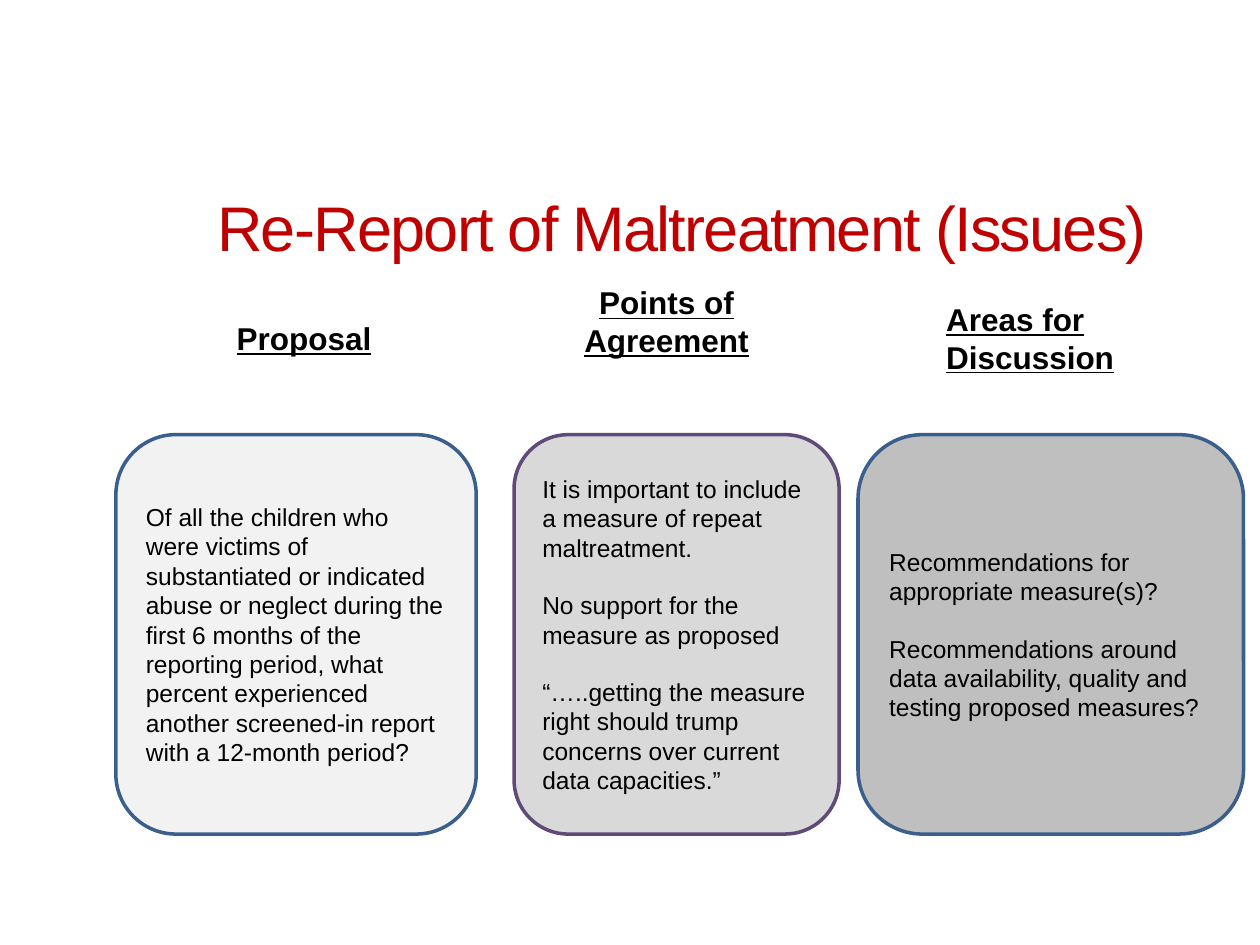
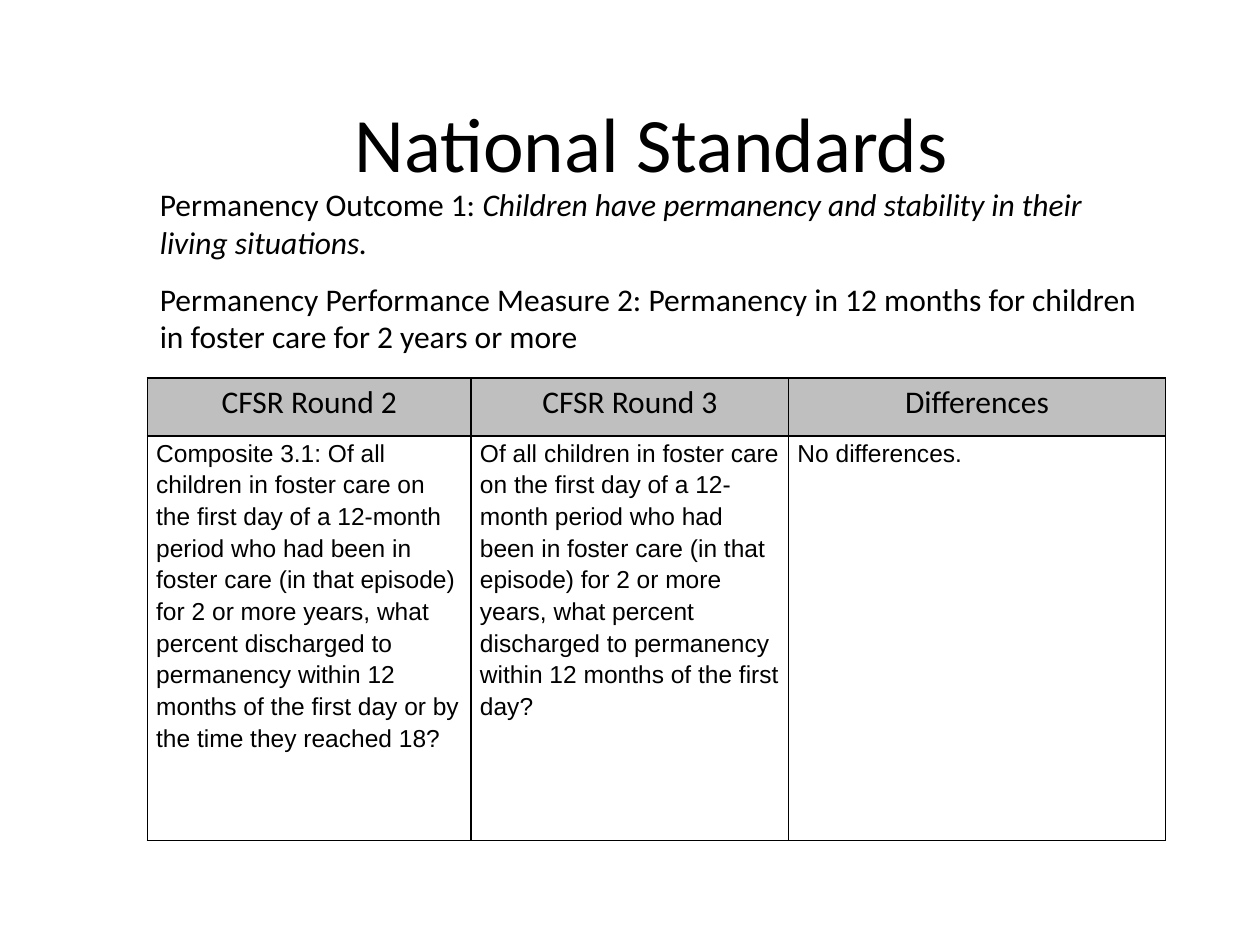
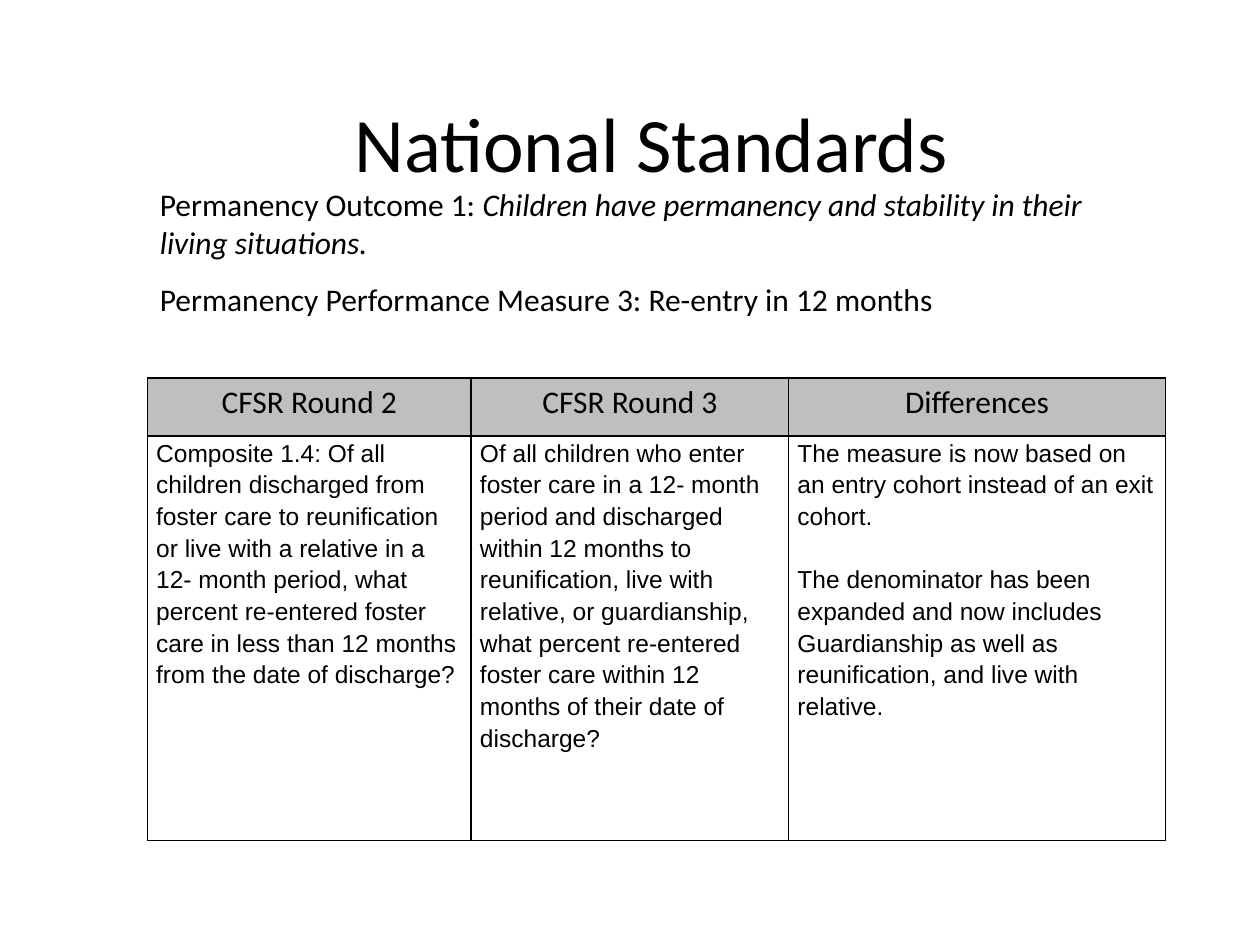
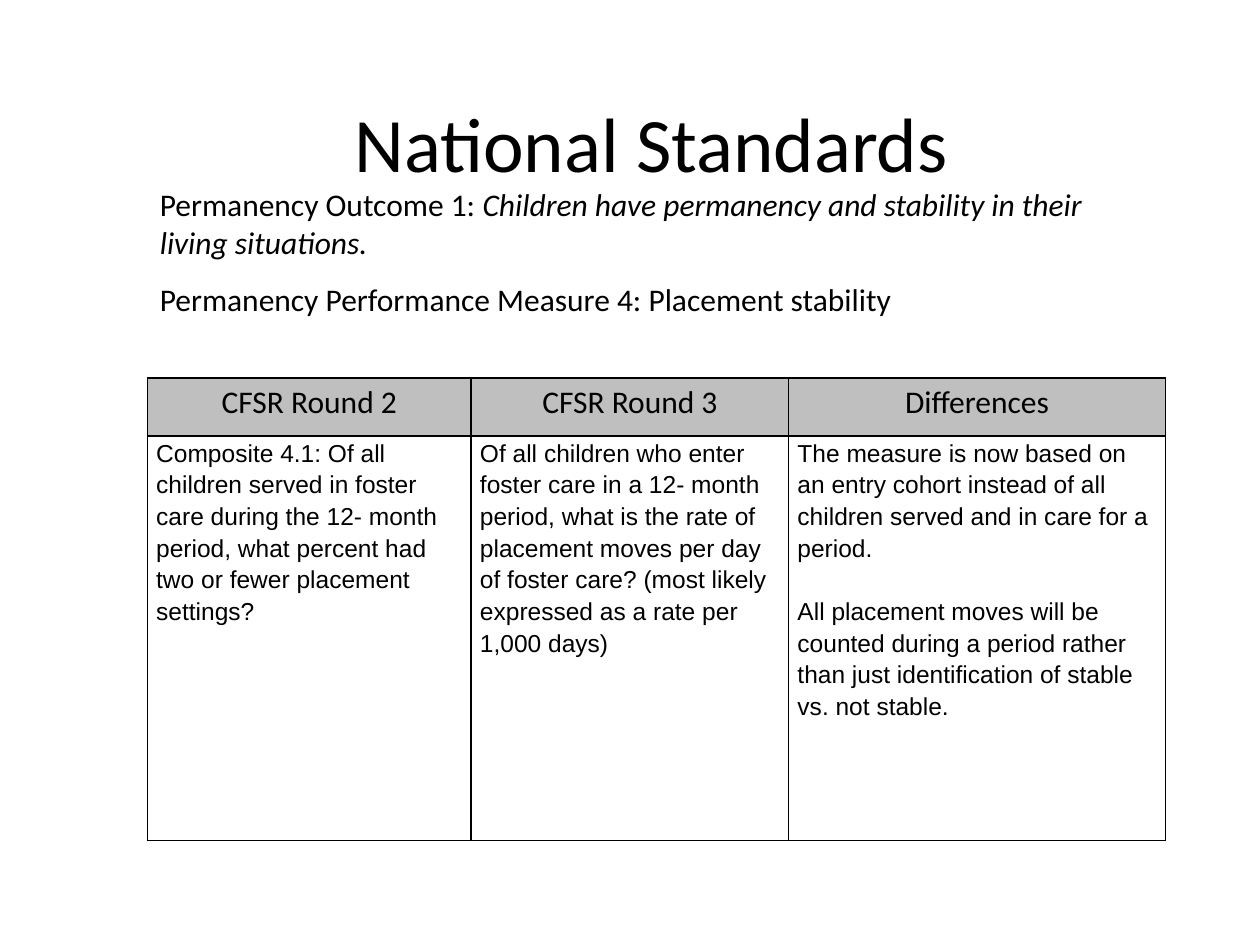
"""Build four slides on re-report of maltreatment and the national permanency standards."""
from lxml import etree
from pptx import Presentation
from pptx import util as u
from pptx.dml.color import RGBColor
from pptx.enum import shapes, text
from pptx.oxml import ns

PX = 9144
COLORS = {
    "title": "C00000", "text": "000000", "header": "BFBFBF",
    "proposal": "F2F2F2", "agreement": "D9D9D9", "discussion": "BFBFBF",
    "blue": "3A5F8C", "purple": "5F4A78",
}
LEFT, CENTER = text.PP_ALIGN.LEFT, text.PP_ALIGN.CENTER
MIDDLE = text.MSO_ANCHOR.MIDDLE
GROW = text.MSO_AUTO_SIZE.SHAPE_TO_FIT_TEXT


def write(frame, lines, size, font, align=LEFT, color="text", heading=False, spacing=None, gap=0):
    """Fill a frame with paragraphs; parts between asterisks are italic."""
    frame.word_wrap = True
    for index, line in enumerate(lines):
        paragraph = frame.add_paragraph() if index else frame.paragraphs[0]
        paragraph.alignment = align
        if spacing:
            paragraph.line_spacing = spacing
        if index and gap:
            paragraph.space_before = u.Pt(gap)
        for part_index, part in enumerate(line.split("*")):
            if not part:
                continue
            run = paragraph.add_run()
            run.text = part
            run.font.size = u.Pt(size)
            run.font.name = font
            run.font.color.rgb = RGBColor.from_string(COLORS[color])
            if heading:
                run.font.bold = run.font.underline = True
            if part_index % 2:
                run.font.italic = True


def add_text(slide, box, lines, size, font, **style):
    """Add a text box at a place given in px and return its frame."""
    frame = slide.shapes.add_textbox(*[n * PX for n in box]).text_frame
    write(frame, lines, size, font, **style)
    return frame


prs = Presentation()
prs.slide_width, prs.slide_height = 1000 * PX, 750 * PX
blank = prs.slide_layouts[6]

issues = prs.slides.add_slide(blank)
issues_title = add_text(issues, (125, 117, 833, 125), ["Re-Report of Maltreatment (Issues)"],
                        36, "Arial", align=CENTER, color="title")
issues_title.vertical_anchor = MIDDLE
issues_title.paragraphs[0].runs[0]._r.get_or_add_rPr().set("spc", "-100")

headings = [
    ("Proposal", (178, 248, 127, 39), LEFT, False),
    ("Points of Agreement", (408, 220, 242, 68), CENTER, True),
    ("Areas for Discussion", (741, 233, 175, 68), LEFT, True),
]
for heading, place, align, wraps in headings:
    heading_frame = add_text(issues, place, [heading], 18, "Arial", align=align, heading=True)
    heading_frame.word_wrap = wraps
    heading_frame.auto_size = GROW

panels = [
    (92, 286, "proposal", "blue", [
        "Of all the children who were victims of substantiated or indicated abuse or neglect "
        "during the first 6 months of the reporting period, what percent experienced another "
        "screened-in report with a 12-month period?"]),
    (408, 258, "agreement", "purple", [
        "It is important to include a measure of repeat maltreatment.",
        "No support for the measure as proposed",
        "“…..getting the measure right should trump concerns over current data capacities.”"]),
    (681, 306, "discussion", "blue", [
        "Recommendations for appropriate measure(s)?",
        "Recommendations around data availability, quality and testing proposed measures?"]),
]
for left, width, fill, outline, points in panels:
    panel = issues.shapes.add_shape(shapes.MSO_SHAPE.ROUNDED_RECTANGLE,
                                    left * PX, 345 * PX, width * PX, 317 * PX)
    panel.shadow.inherit = False
    panel.fill.solid()
    panel.fill.fore_color.rgb = RGBColor.from_string(COLORS[fill])
    panel.line.color.rgb = RGBColor.from_string(COLORS[outline])
    panel.line.width = u.Pt(2)
    panel.text_frame.vertical_anchor = MIDDLE
    write(panel.text_frame, points, 14, "Arial", gap=16)

columns = [("CFSR Round 2", 257), ("CFSR Round 3", 252), ("Differences", 299)]
measures = [
    ("2: Permanency in 12 months for children in foster care for 2 years or more", 71, [
        ["Composite 3.1: Of all children in foster care on the first day of a 12-month period "
         "who had been in foster care (in that episode) for 2 or more years, what percent "
         "discharged to permanency within 12 months of the first day or by the time they "
         "reached 18?"],
        ["Of all children in foster care on the first day of a 12-month period who had been in "
         "foster care (in that episode) for 2 or more years, what percent discharged to "
         "permanency within 12 months of the first day?"],
        ["No differences."]]),
    ("3: Re-entry in 12 months", 40, [
        ["Composite 1.4: Of all children discharged from foster care to reunification or live "
         "with a relative in a 12- month period, what percent re-entered foster care in less "
         "than 12 months from the date of discharge?"],
        ["Of all children who enter foster care in a 12- month period and discharged within 12 "
         "months to reunification, live with relative, or guardianship, what percent re-entered "
         "foster care within 12 months of their date of discharge?"],
        ["The measure is now based on an entry cohort instead of an exit cohort.",
         "The denominator has been expanded and now includes Guardianship as well as "
         "reunification, and live with relative."]]),
    ("4: Placement stability", 40, [
        ["Composite 4.1: Of all children served in foster care during the 12- month period, "
         "what percent had two or fewer placement settings?"],
        ["Of all children who enter foster care in a 12- month period, what is the rate of "
         "placement moves per day of foster care? (most likely expressed as a rate per 1,000 "
         "days)"],
        ["The measure is now based on an entry cohort instead of all children served and in "
         "care for a period.",
         "All placement moves will be counted during a period rather than just identification "
         "of stable vs. not stable."]]),
]
for measure, measure_height, comparison in measures:
    standards = prs.slides.add_slide(blank)
    standards_title = add_text(standards, (67, 50, 900, 125), ["National Standards"],
                               44, "Calibri", align=CENTER)
    standards_title.vertical_anchor = MIDDLE

    rounds = standards.shapes.add_table(2, 3, 117 * PX, 300 * PX, 808 * PX, 367 * PX).table
    rounds.first_row = rounds.horz_banding = False
    rounds.rows[0].height, rounds.rows[1].height = 46 * PX, 321 * PX
    for index, (header, width) in enumerate(columns):
        rounds.columns[index].width = width * PX
        for row in range(2):
            cell = rounds.cell(row, index)
            cell.margin_left = cell.margin_right = 7 * PX
            cell.margin_top = cell.margin_bottom = 0
            properties = cell._tc.get_or_add_tcPr()
            for side in ("lnL", "lnR", "lnT", "lnB"):
                border = etree.SubElement(properties, ns.qn("a:" + side), w=str(u.Pt(1)))
                border_fill = etree.SubElement(border, ns.qn("a:solidFill"))
                etree.SubElement(border_fill, ns.qn("a:srgbClr"), val=COLORS["text"])
            if row:
                cell.fill.background()
                write(cell.text_frame, comparison[index], 14, "Arial", spacing=1.15, gap=18)
            else:
                cell.fill.solid()
                cell.fill.fore_color.rgb = RGBColor.from_string(COLORS["header"])
                write(cell.text_frame, [header], 18, "Calibri", align=CENTER, spacing=1.15)

    outcome = "Permanency Outcome 1: *Children have permanency and stability in their living situations.*"
    statements = [
        (outcome, (117, 142, 808, 71)),
        ("Permanency Performance Measure " + measure, (117, 217, 800, measure_height)),
    ]
    for statement, place in statements:
        add_text(standards, place, [statement], 18, "Calibri").auto_size = GROW

prs.save("out.pptx")
